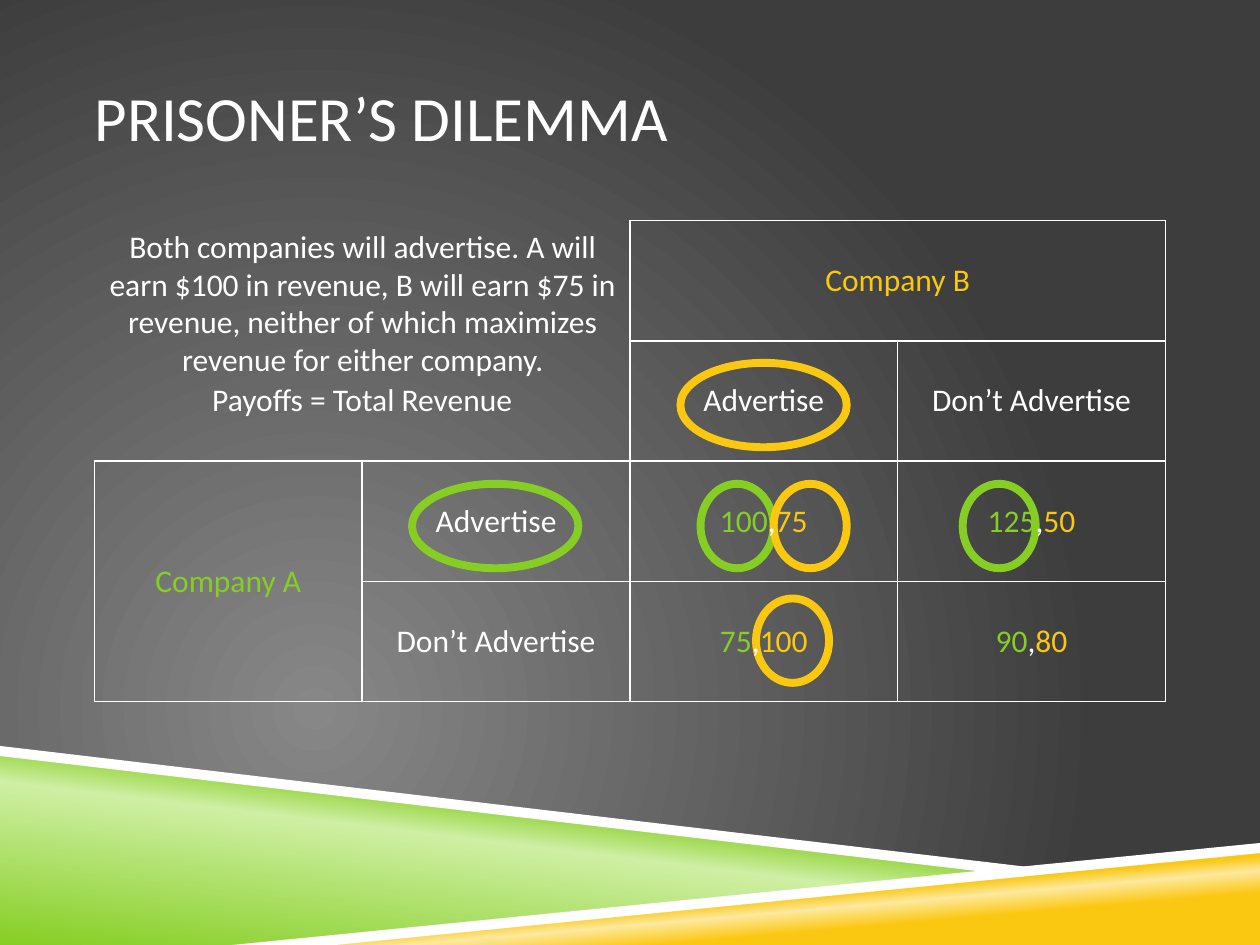
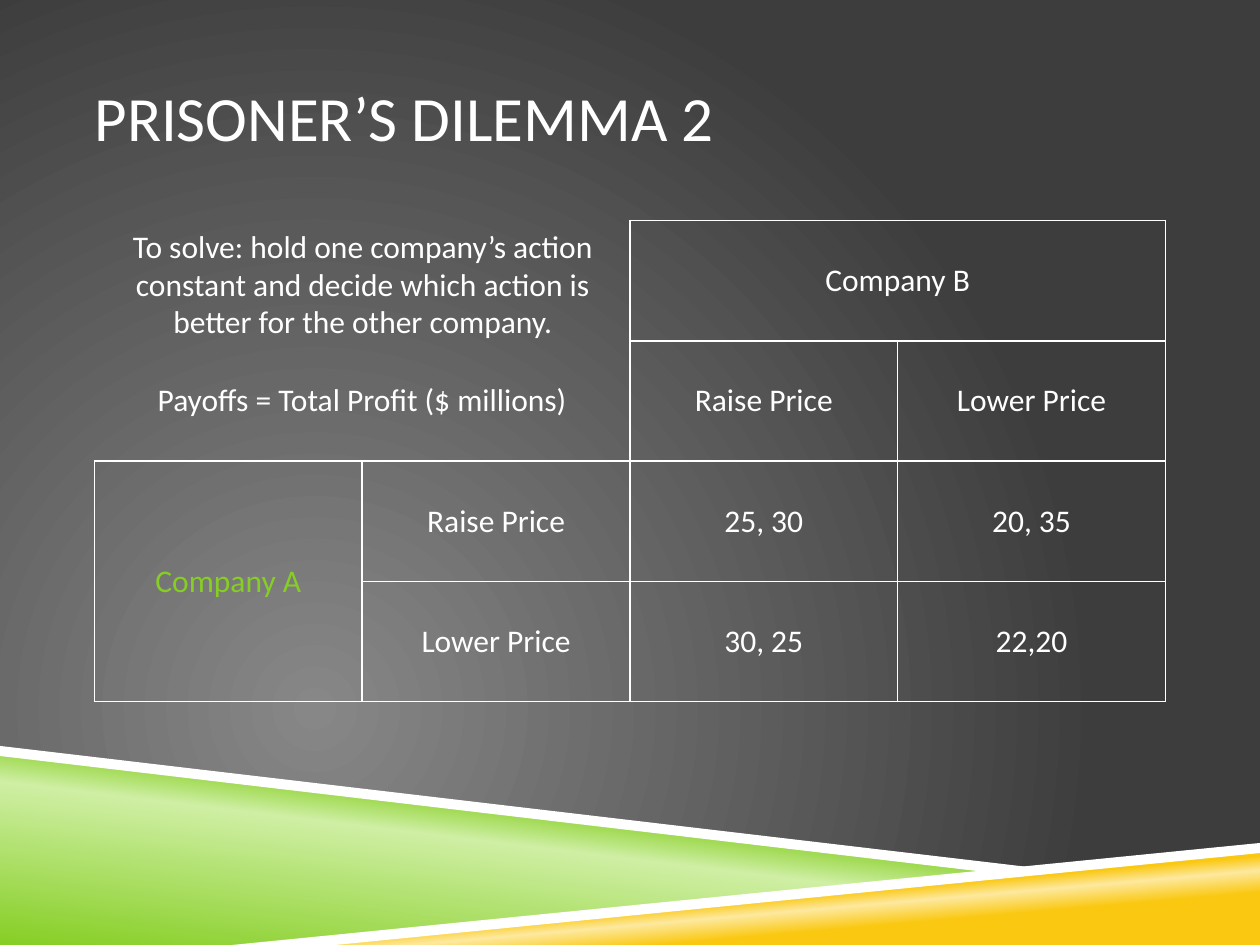
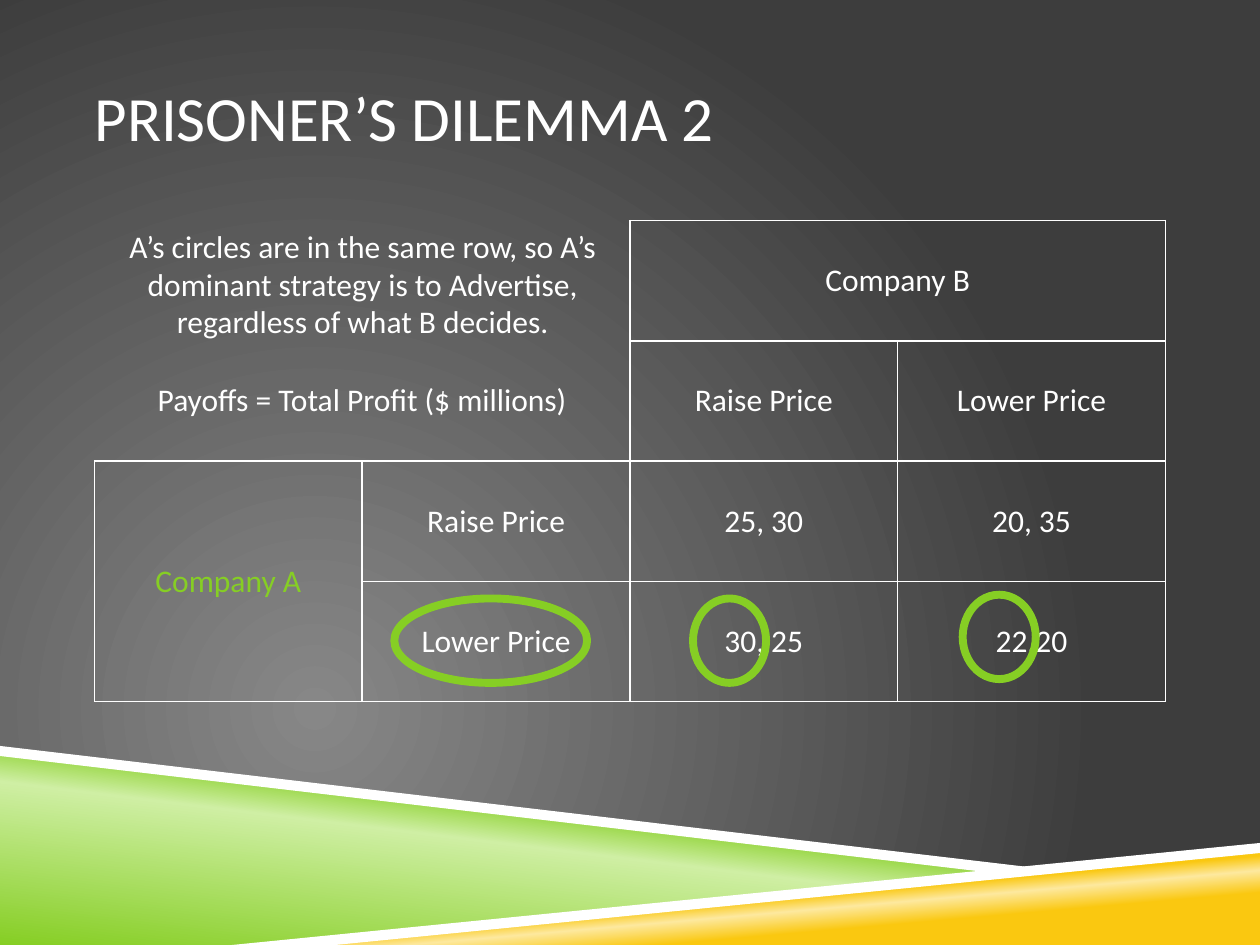
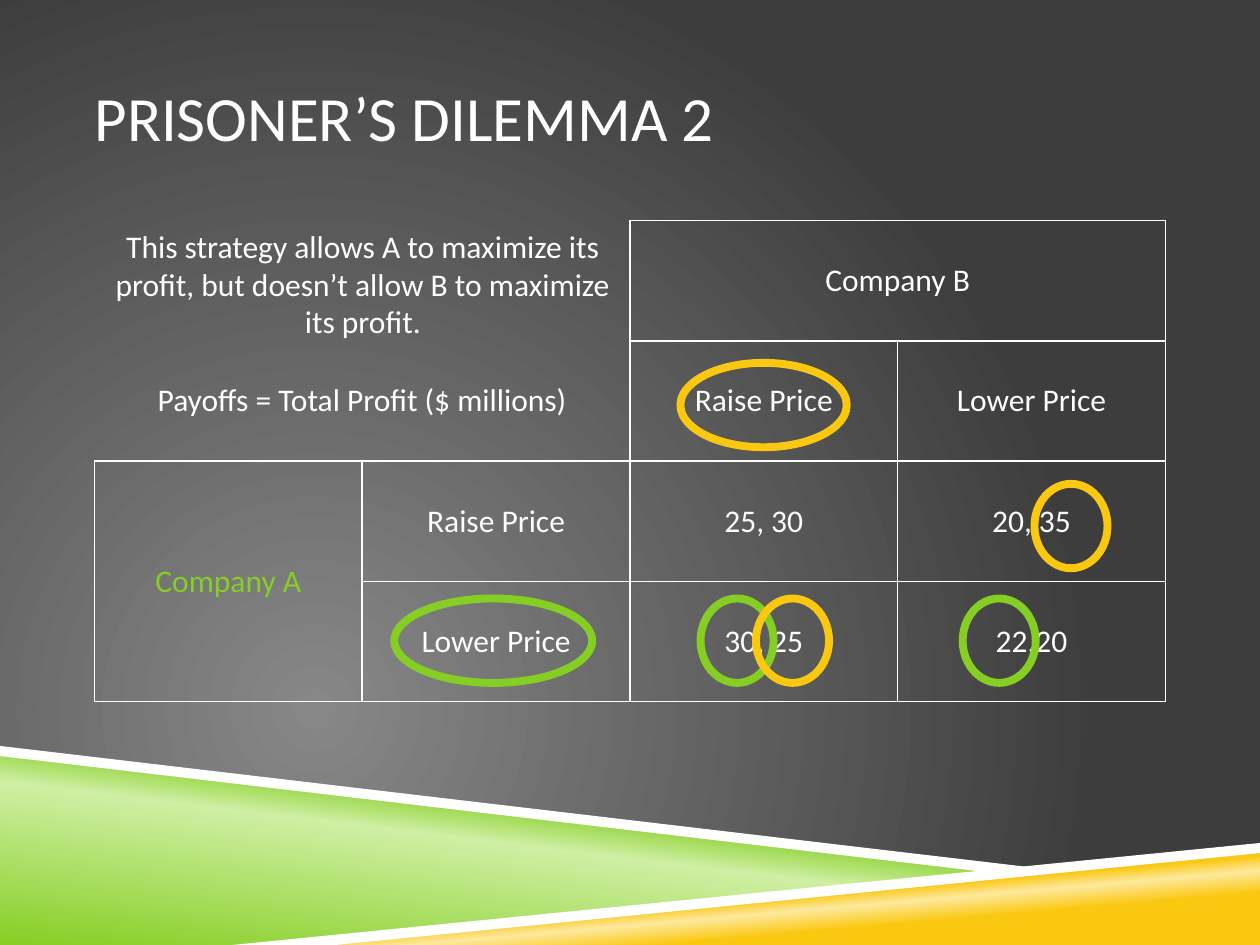
from lxml.etree import SubElement
from pptx import Presentation
from pptx.dml.color import RGBColor
from pptx.enum.shapes import MSO_SHAPE
from pptx.enum.text import MSO_ANCHOR, MSO_AUTO_SIZE, PP_ALIGN
from pptx.oxml import parse_xml
from pptx.oxml.ns import nsdecls, qn
from pptx.util import Inches, Pt

FONT = "Calibri"
WHITE, GREEN, GOLD = "FFFFFF", "86CE24", "FAC810"

BACKGROUND = [(0, "878787"), (100, "3D3D3D")]
GREEN_STOPS = [(0, GREEN), (52, "CFEFA4"), (66, GREEN)]
GOLD_STOPS = [(28, GOLD), (40, "FDE99F"), (48, GOLD)]
BANDS = [
    ([(0, 5.97), (7.92, 6.92), (2, 7.5), (0, 7.5)], GREEN_STOPS, 277),
    ([(1.98, 7.5), (10, 6.72), (10, 7.5)], GOLD_STOPS, 265),
    ([(0, 5.92), (0, 6), (7.9, 6.93), (8.32, 6.9)], None, None),
    ([(10, 6.69), (1.84, 7.5), (2.66, 7.5), (10, 6.77)], None, None),
]

TABLE_LEFT, TABLE_TOP, TABLE_W, TABLE_H = 0.75, 1.75, 8.5, 3.82
RING_W, RING_H = 0.58, 0.67
HEAD_Y, UPPER_Y, LOWER_Y = 2.88, 3.84, 4.75

ADVERTISING = {
    "unit": "Payoffs = Total Revenue",
    "actions": ["Advertise", "Don’t Advertise"],
    "payoffs": [["100,75", "125,50"], ["75,100", "90,80"]],
    "b_color": GOLD,
    "payoff_colors": (GREEN, WHITE, GOLD),
}
PRICING = {
    "unit": "Payoffs = Total Profit ($ millions)",
    "actions": ["Raise Price", "Lower Price"],
    "payoffs": [["25, 30", "20, 35"], ["30, 25", "22,20"]],
    "b_color": WHITE,
    "payoff_colors": (WHITE, WHITE, WHITE),
}

SLIDES = [
    {
        "title": "PRISONER’S DILEMMA",
        "note": "Both companies will advertise. A will earn $100 in revenue, B will earn $75 in "
                "revenue, neither of which maximizes revenue for either company.",
        "note_h": 1.31,
        "game": ADVERTISING,
        "table_on_top": True,
        "rings": [
            (5.56, UPPER_Y, RING_W, GREEN), (7.64, UPPER_Y, RING_W, GREEN),
            (6.14, UPPER_Y, RING_W, GOLD), (6, LOWER_Y, RING_W, GOLD),
            (3.27, UPPER_Y, 1.32, GREEN), (5.4, HEAD_Y, 1.32, GOLD),
        ],
    },
    {
        "title": "PRISONER’S DILEMMA 2",
        "note": "To solve: hold one company’s action constant and decide which action is "
                "better for the other company.",
        "note_h": 1.01,
        "game": PRICING,
        "table_on_top": True,
        "rings": [],
    },
    {
        "title": "PRISONER’S DILEMMA 2",
        "note": "A’s circles are in the same row, so A’s dominant strategy is to Advertise, "
                "regardless of what B decides.",
        "note_h": 1.01,
        "game": PRICING,
        "table_on_top": False,
        "rings": [
            (3.13, LOWER_Y, 1.53, GREEN), (5.5, LOWER_Y, RING_W, GREEN),
            (7.64, 4.72, RING_W, GREEN),
        ],
    },
    {
        "title": "PRISONER’S DILEMMA 2",
        "note": "This strategy allows A to maximize its profit, but doesn’t allow B to "
                "maximize its profit.",
        "note_h": 1.01,
        "game": PRICING,
        "table_on_top": False,
        "rings": [
            (5.4, HEAD_Y, 1.32, GOLD), (5.56, LOWER_Y, RING_W, GREEN),
            (7.64, LOWER_Y, RING_W, GREEN), (8.21, UPPER_Y, RING_W, GOLD),
            (6, LOWER_Y, RING_W, GOLD), (3.13, LOWER_Y, 1.57, GREEN),
        ],
    },
]


def rgb(color):
    return RGBColor.from_string(color)


def style(font, size, color):
    font.name, font.size = FONT, Pt(size)
    font.color.rgb = rgb(color)


def set_gradient(element, stops, angle=None):
    grad = element.find(".//" + qn("a:gradFill"))
    for child in list(grad):
        grad.remove(child)
    stop_list = SubElement(grad, qn("a:gsLst"))
    for position, color in stops:
        gs = SubElement(stop_list, qn("a:gs"), pos=str(position * 1000))
        SubElement(gs, qn("a:srgbClr"), val=color)
    if angle is None:
        radial = SubElement(grad, qn("a:path"), path="circle")
        SubElement(radial, qn("a:fillToRect"), l="50000", t="100000", r="100000", b="50000")
    else:
        SubElement(grad, qn("a:lin"), ang=str(angle * 60000), scaled="0")


def decorate_master(prs, s):
    master = prs.slide_master
    master.background.fill.gradient()
    set_gradient(master.element, BACKGROUND)
    for i, (points, stops, angle) in enumerate(BANDS):
        corners = [(Inches(x), Inches(y)) for x, y in points]
        builder = s.shapes.build_freeform(*corners[0])
        builder.add_line_segments(corners[1:], close=True)
        band = builder.convert_to_shape()
        band.shadow.inherit = False
        band.line.fill.background()
        if stops:
            band.fill.gradient()
            set_gradient(band.element, stops, angle)
        else:
            band.fill.solid()
            band.fill.fore_color.rgb = rgb(WHITE)
        master.shapes.element.insert(2 + i, band.element)


def add_title(s, text):
    sp = s.shapes.title
    sp.left, sp.top, sp.width, sp.height = Inches(0.75), Inches(0.3), Inches(8.5), Inches(1.25)
    tf = sp.text_frame
    tf.text = text
    tf.vertical_anchor = MSO_ANCHOR.MIDDLE
    tf.margin_left = tf.margin_right = 0
    p = tf.paragraphs[0]
    p.alignment = PP_ALIGN.LEFT
    style(p.runs[0].font, 36, WHITE)


def add_note(s, text, height):
    sp = s.shapes.add_textbox(Inches(TABLE_LEFT), Inches(TABLE_TOP), Inches(4.26), Inches(height))
    tf = sp.text_frame
    tf.word_wrap = True
    tf.auto_size = MSO_AUTO_SIZE.SHAPE_TO_FIT_TEXT
    tf.text = text
    p = tf.paragraphs[0]
    p.alignment = PP_ALIGN.CENTER
    style(p.runs[0].font, 18, WHITE)


def add_ring(s, left, top, width, color):
    ring = s.shapes.add_shape(MSO_SHAPE.OVAL, Inches(left), Inches(top), Inches(width), Inches(RING_H))
    ring.shadow.inherit = False
    ring.fill.background()
    ring.line.color.rgb = rgb(color)
    ring.line.width = Pt(4.5)


def set_borders(cell, sides):
    tc_pr = cell._tc.get_or_add_tcPr()
    for i, side in enumerate("LRTB"):
        fill = f'<a:solidFill><a:srgbClr val="{WHITE}"/></a:solidFill>' if side in sides else "<a:noFill/>"
        tc_pr.insert(i, parse_xml(f'<a:ln{side} {nsdecls("a")} w="12700">{fill}</a:ln{side}>'))


def fill_cell(cell, runs):
    cell.vertical_anchor = MSO_ANCHOR.MIDDLE
    p = cell.text_frame.paragraphs[0]
    p.alignment = PP_ALIGN.CENTER
    for text, color in runs:
        r = p.add_run()
        r.text = text
        style(r.font, 18, color)


def add_payoff_table(s, game):
    frame = s.shapes.add_table(4, 4, Inches(TABLE_LEFT), Inches(TABLE_TOP), Inches(TABLE_W), Inches(TABLE_H))
    table = frame.table
    table.first_row = table.horz_banding = False
    for row in range(4):
        for col in range(4):
            cell = table.cell(row, col)
            cell.fill.background()
            in_corner = row < 2 and col < 2
            set_borders(cell, ("R", "RB")[row] if in_corner else "LRTB")
    for start, end in [((0, 0), (0, 1)), ((0, 2), (0, 3)), ((1, 0), (1, 1)), ((2, 0), (3, 0))]:
        table.cell(*start).merge(table.cell(*end))

    fill_cell(table.cell(0, 2), [("Company B", game["b_color"])])
    fill_cell(table.cell(1, 0), [(game["unit"], WHITE)])
    fill_cell(table.cell(2, 0), [("Company A", GREEN)])
    for i, action in enumerate(game["actions"]):
        fill_cell(table.cell(1, 2 + i), [(action, WHITE)])
        fill_cell(table.cell(2 + i, 1), [(action, WHITE)])
        for j, payoff in enumerate(game["payoffs"][i]):
            colors = game["payoff_colors"]
            if len(set(colors)) == 1:
                runs = [(payoff, colors[0])]
            else:
                runs = zip(payoff.partition(","), colors)
            fill_cell(table.cell(2 + i, 2 + j), runs)


def main():
    prs = Presentation()
    prs.slide_width, prs.slide_height = Inches(10), Inches(7.5)
    for i, content in enumerate(SLIDES):
        s = prs.slides.add_slide(prs.slide_layouts[5])
        if i == 0:
            decorate_master(prs, s)
        add_title(s, content["title"])
        if not content["table_on_top"]:
            add_payoff_table(s, content["game"])
        add_note(s, content["note"], content["note_h"])
        for ring in content["rings"]:
            add_ring(s, *ring)
        if content["table_on_top"]:
            add_payoff_table(s, content["game"])
    prs.save("out.pptx")


if __name__ == "__main__":
    main()
